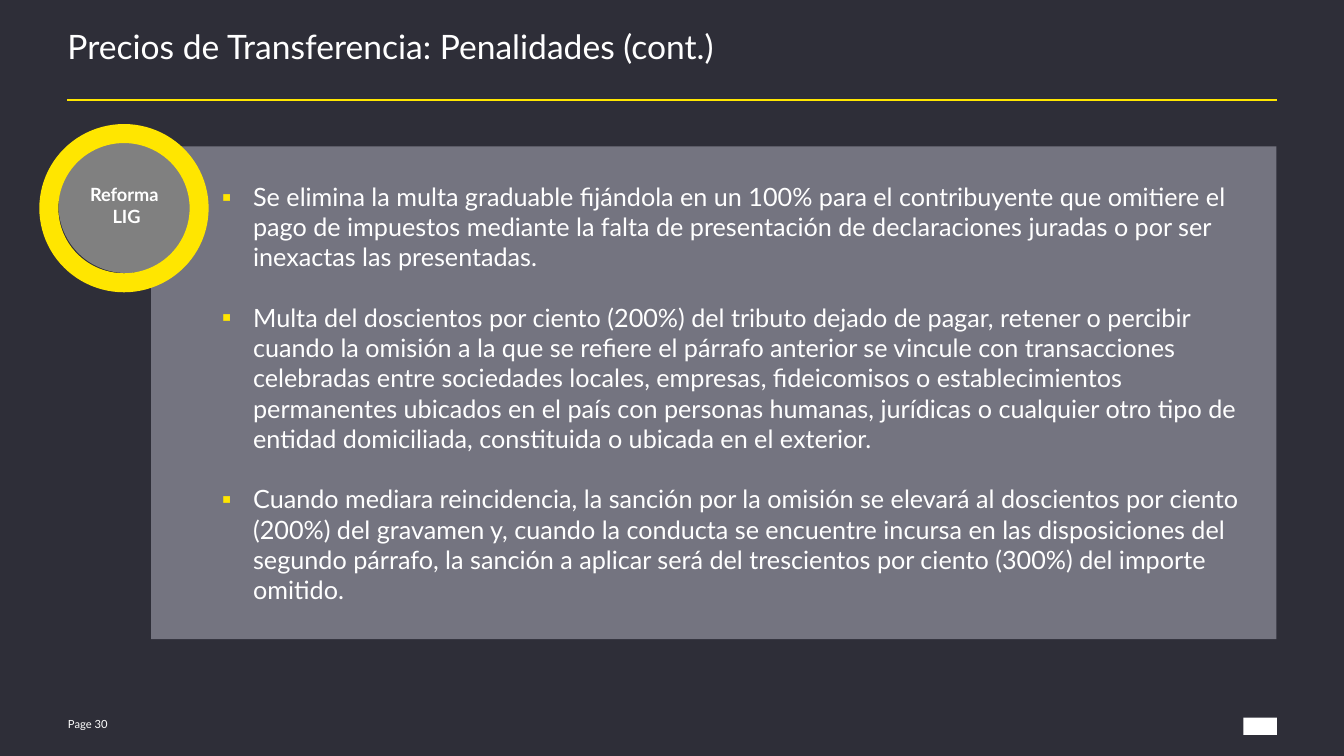
from lxml import etree
from pptx import Presentation
from pptx.dml.color import RGBColor
from pptx.enum.shapes import MSO_CONNECTOR, MSO_SHAPE
from pptx.enum.text import MSO_ANCHOR, MSO_AUTO_SIZE, PP_ALIGN
from pptx.oxml.ns import qn
from pptx.util import Pt

DARK = RGBColor(0x2E, 0x2E, 0x38)
YELLOW = RGBColor(0xFF, 0xE6, 0x00)
WHITE = RGBColor(0xFF, 0xFF, 0xFF)
SLATE = RGBColor(0x74, 0x74, 0x80)
GRAY = RGBColor(0x80, 0x80, 0x80)
LEFT, CENTER = PP_ALIGN.LEFT, PP_ALIGN.CENTER
TOP, MIDDLE = MSO_ANCHOR.TOP, MSO_ANCHOR.MIDDLE
RECT, OVAL, DONUT = MSO_SHAPE.RECTANGLE, MSO_SHAPE.OVAL, MSO_SHAPE.DONUT

POINTS = [
    "Se elimina la multa graduable fijándola en un 100% para el contribuyente que omitiere el pago de impuestos mediante la falta de presentación de declaraciones juradas o por ser inexactas las presentadas.",
    "Multa del doscientos por ciento (200%) del tributo dejado de pagar, retener o percibir cuando la omisión a la que se refiere el párrafo anterior se vincule con transacciones celebradas entre sociedades locales, empresas, fideicomisos o establecimientos permanentes ubicados en el país con personas humanas, jurídicas o cualquier otro tipo de entidad domiciliada, constituida o ubicada en el exterior.",
    "Cuando mediara reincidencia, la sanción por la omisión se elevará al doscientos por ciento (200%) del gravamen y, cuando la conducta se encuentre incursa en las disposiciones del segundo párrafo, la sanción a aplicar será del trescientos por ciento (300%) del importe omitido.",
]


def write(shape, lines, size, anchor, insets, align=LEFT, bold=False):
    """Fill a shape with one paragraph per line; insets run left, top, right, bottom."""
    frame = shape.text_frame
    frame.word_wrap = True
    frame.auto_size = MSO_AUTO_SIZE.NONE
    frame.vertical_anchor = anchor
    (frame.margin_left, frame.margin_top,
     frame.margin_right, frame.margin_bottom) = map(Pt, insets)
    for i, line in enumerate(lines):
        para = frame.add_paragraph() if i else frame.paragraphs[0]
        para.alignment = align
        para.space_before = para.space_after = Pt(0)
        run = para.add_run()
        run.text = line
        font = run.font
        font.name, font.size, font.bold = "Lato", Pt(size), bold
        font.color.rgb = WHITE
    return frame.paragraphs


def draw(kind, box, color):
    shape = slide.shapes.add_shape(kind, *map(Pt, box))
    shape.shadow.inherit = False
    shape.fill.solid()
    shape.fill.fore_color.rgb = color
    shape.line.fill.background()
    return shape


deck = Presentation()
deck.slide_width, deck.slide_height = Pt(960.5), Pt(540)
slide = deck.slides.add_slide(deck.slide_layouts[1])
slide.background.fill.solid()
slide.background.fill.fore_color.rgb = DARK

# Title and rule
title, panel = slide.placeholders
title.left, title.top, title.width, title.height = map(Pt, (48.2, 23, 864.4, 46.8))
head = write(title, ["Precios de Transferencia: Penalidades (cont.)"], 24, TOP, (0, 0, 0, 0))
head[0].line_spacing = 0.85

rule = slide.shapes.add_connector(MSO_CONNECTOR.STRAIGHT, Pt(48.2), Pt(71.4), Pt(912.4), Pt(71.4))
rule.line.color.rgb = YELLOW
rule.line.width = Pt(1.5)
etree.SubElement(rule._element.spPr, qn("a:effectLst"))

# Panel with the penalties
panel.left, panel.top, panel.width, panel.height = map(Pt, (108, 104.6, 804.2, 352))
panel.fill.solid()
panel.fill.fore_color.rgb = SLATE
for i, para in enumerate(write(panel, POINTS, 18, MIDDLE, (50.4, 5.8, 8.6, 5.8))):
    para.space_before = Pt(21.6 if i else 0)
    props = para._p.get_or_add_pPr()
    props.set("marL", str(Pt(22.5)))
    props.set("indent", str(-Pt(22.5)))
    tint = etree.SubElement(props, qn("a:buClr"))
    etree.SubElement(tint, qn("a:srgbClr"), val=str(YELLOW))
    etree.SubElement(props, qn("a:buFont"), typeface="Lato")
    etree.SubElement(props, qn("a:buChar"), char="▪")

# Badge
badge = draw(OVAL, (41.8, 98.6, 97.2, 96.5), GRAY)
write(badge, ["Reforma ", "LIG"], 13, MIDDLE, (7.2, 3.6, 7.2, 3.6), CENTER, True)
ring = draw(DONUT, (28.1, 88.6, 121, 120.2), YELLOW)
ring.adjustments[0] = 0.113

# Footer
page = slide.shapes.add_textbox(Pt(48.6), Pt(509.8), Pt(52.6), Pt(14.4))
write(page, ["Page 30"], 8, MIDDLE, (0, 0, 0, 0))
draw(RECT, (888.5, 512.6, 24, 12.4), WHITE)

deck.save("out.pptx")
